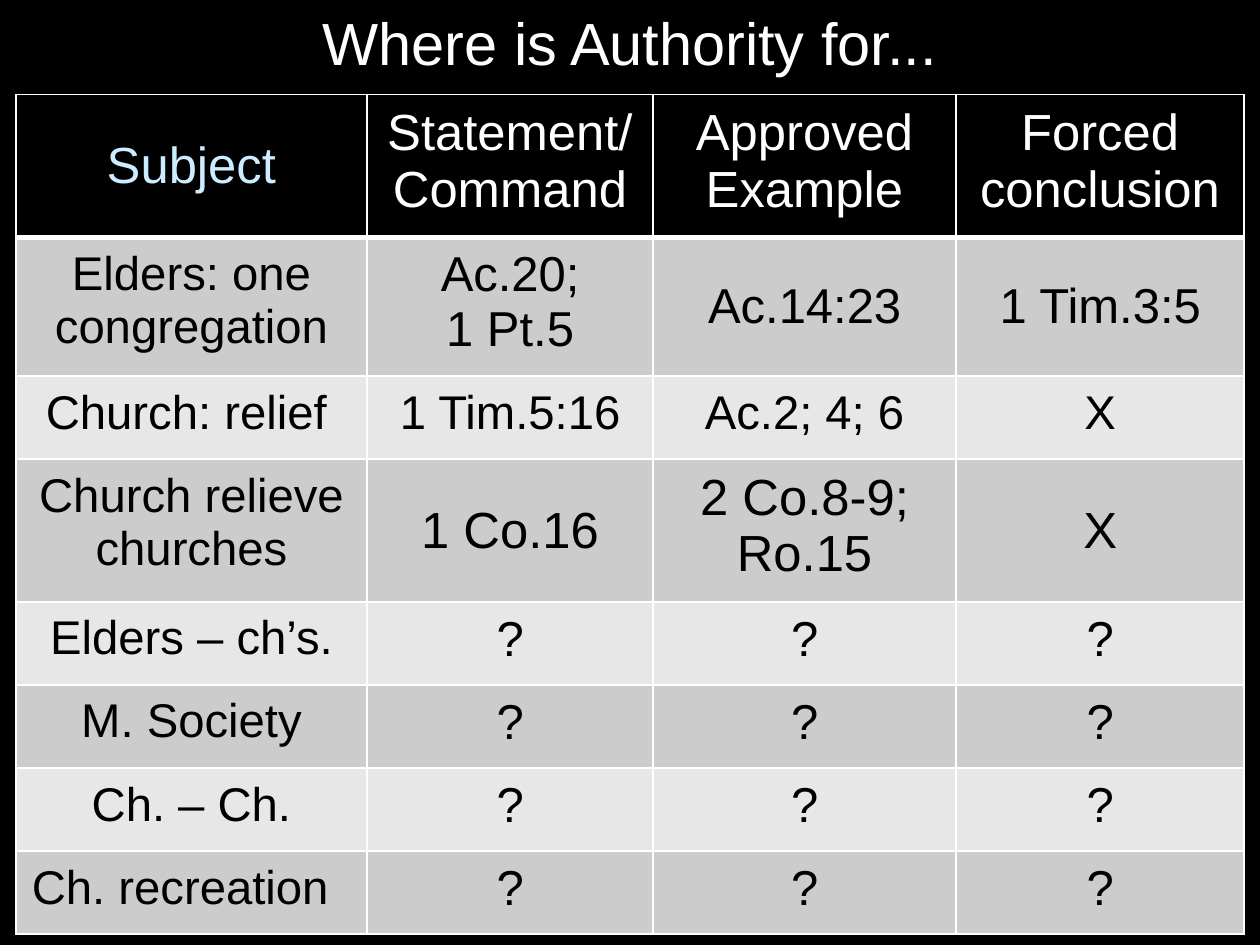
from lxml.etree import SubElement
from pptx import Presentation
from pptx.dml.color import RGBColor
from pptx.enum.text import MSO_ANCHOR, PP_ALIGN
from pptx.oxml.ns import qn
from pptx.util import Pt

COLORS = {
    "black": "000000",
    "white": "FFFFFF",
    "subject": "CCECFF",
    "dark_band": "CCCCCC",
    "light_band": "E7E7E7",
}
FONT = "Arial"
COL_WIDTHS = [200.8, 163.4, 173.2, 164.6]
ROW_HEIGHTS = [81.5, 79.2, 47.4, 81.5] + [47.4] * 4
ROWS = [
    ("Subject", "Statement/Command", "Approved Example", "Forced conclusion"),
    ("Elders: one congregation", "Ac.20;\v1 Pt.5", "Ac.14:23", "1 Tim.3:5"),
    ("Church: relief", "1 Tim.5:16", "Ac.2; 4; 6", "X"),
    ("Church relieve churches", "1 Co.16", "2 Co.8-9; Ro.15", "X"),
    ("Elders – ch’s.", "?", "?", "?"),
    ("M. Society", "?", "?", "?"),
    ("Ch. – Ch.", "?", "?", "?"),
    ("Ch. recreation", "?", "?", "?"),
]
SUBJECT_SIZES = [29] + [27] * 7
VALUE_SIZES = [29, 28, 27, 29] + [28] * 4
MIDDLE_CELLS = {(0, 0), (1, 2), (1, 3), (3, 1), (3, 3)}
LEFT_MARGINS = {(2, 0): 17.2, (7, 0): 9.2}


def rgb(name):
    """Return the named colour."""
    return RGBColor.from_string(COLORS[name])


def style_paragraph(p, size, color, align=PP_ALIGN.CENTER):
    """Set font and alignment of one paragraph."""
    p.alignment = align
    p.font.name = FONT
    p.font.size = Pt(size)
    p.font.color.rgb = rgb(color)


def set_border(cell, side, width):
    """Draw a white line on one side of a cell, ahead of its fill."""
    tc_pr = cell._tc.get_or_add_tcPr()
    ln = SubElement(tc_pr, qn(f"a:ln{side}"), w=str(Pt(width)))
    fill = SubElement(ln, qn("a:solidFill"))
    SubElement(fill, qn("a:srgbClr"), val=COLORS["white"])


def add_title(s, left, top, width, height):
    """Place the slide title in the given box."""
    sp = s.shapes.title
    sp.left, sp.top, sp.width, sp.height = map(Pt, (left, top, width, height))
    tf = sp.text_frame
    tf.text = "Where is Authority for..."
    tf.vertical_anchor = MSO_ANCHOR.MIDDLE
    style_paragraph(tf.paragraphs[0], 34, "white")


def fill_cell(cell, row, col):
    """Write and format one cell of the authority table."""
    cell.text = ROWS[row][col]
    cell.margin_left = Pt(LEFT_MARGINS.get((row, col), 9.2))
    cell.margin_right = Pt(9.2)
    cell.margin_top = cell.margin_bottom = Pt(5.8)
    is_middle = (row, col) in MIDDLE_CELLS
    cell.vertical_anchor = MSO_ANCHOR.MIDDLE if is_middle else MSO_ANCHOR.TOP
    set_border(cell, "L", 1)
    set_border(cell, "R", 1)
    set_border(cell, "T", 3 if row == 1 else 1)
    set_border(cell, "B", 3 if row == 0 else 1)
    cell.fill.solid()
    if row == 0:
        band, color = "black", "white" if col else "subject"
    else:
        band, color = "dark_band" if row % 2 else "light_band", "black"
    cell.fill.fore_color.rgb = rgb(band)
    size = (VALUE_SIZES if col else SUBJECT_SIZES)[row]
    align = PP_ALIGN.LEFT if (row, col) in LEFT_MARGINS else PP_ALIGN.CENTER
    style_paragraph(cell.text_frame.paragraphs[0], size, color, align)


def add_authority_table(s, left, top, width, height):
    """Place the table, its columns and rows scaled to the given box."""
    table = s.shapes.add_table(
        len(ROWS), len(COL_WIDTHS), Pt(left), Pt(top), Pt(width), Pt(height)
    ).table
    for column, share in zip(table.columns, COL_WIDTHS):
        column.width = Pt(width * share / sum(COL_WIDTHS))
    for row, share in zip(table.rows, ROW_HEIGHTS):
        row.height = Pt(height * share / sum(ROW_HEIGHTS))
    for row in range(len(ROWS)):
        for col in range(len(COL_WIDTHS)):
            fill_cell(table.cell(row, col), row, col)


def main():
    """Build the slide and save it."""
    prs = Presentation()
    prs.slide_width, prs.slide_height = Pt(720), Pt(540)
    s = prs.slides.add_slide(prs.slide_layouts[5])
    s.background.fill.solid()
    s.background.fill.fore_color.rgb = rgb("black")
    add_title(s, 21, 0, 678, 48)
    add_authority_table(s, 9, 54, 702, 480)
    prs.save("out.pptx")


if __name__ == "__main__":
    main()
